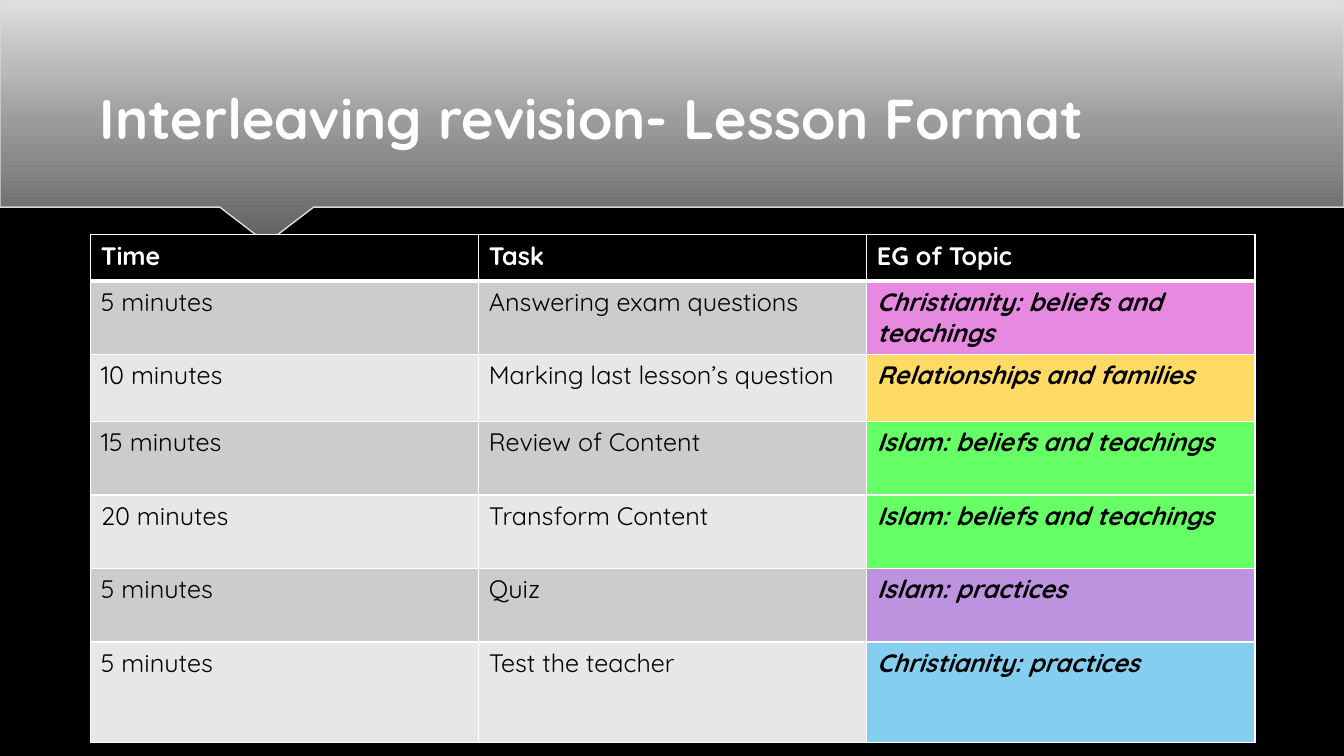
import pptx
import pptx.util
import pptx.dml.color
import pptx.enum.text
import pptx.oxml
import pptx.oxml.ns

Pt = pptx.util.Pt
RGB = pptx.dml.color.RGBColor.from_string

# Content
TITLE = "Interleaving revision- Lesson Format"
HEADS = ("Time", "Task", "EG of Topic")
TASKS = [  # time, task, topic, topic colour, row height
    ("5 minutes", "Answering exam questions", "Christianity: beliefs and teachings", "E789E0", 52),
    ("10 minutes", "Marking last lesson’s question", "Relationships and families", "FFDA65", 48),
    ("15 minutes", "Review of Content", "Islam: beliefs and teachings", "66FF66", 52.5),
    ("20 minutes", "Transform Content", "Islam: beliefs and teachings", "66FF66", 52.5),
    ("5 minutes", "Quiz", "Islam: practices", "BD92DE", 52.5),
    ("5 minutes", "Test the teacher", "Christianity: practices", "84CFF0", 72),
]
THEME = {
    "font": "Quicksand", "title": 40, "body": 18,
    "back": "000000", "light": "FFFFFF", "head": "FEFEFE", "edge": "DADADA",
    "bands": ("CCCCCC", "E7E7E7"),
    "fade": ((0, "616161"), (50, "9C9C9C"), (70, "B8B8B8"), (100, "DFDFDF")),
}
WIDE, HIGH = 960, 540
BASE = 148.3  # lower edge of the banner
BANNER = [(WIDE, 0), (0, 0), (0, BASE), (157, BASE), (187.2, 171.4),
          (191, 172), (194.4, 171.4), (224, BASE), (WIDE, BASE)]
LEFT, TOP, COL, HEAD = 64.8, 167.7, 277.2, 33


def xml(tag, inner, attrs=""):
    space = pptx.oxml.ns.nsdecls("a")
    return pptx.oxml.parse_xml(f"<a:{tag} {space} {attrs}>{inner}</a:{tag}>")


def style(frame, size, color, bold=False, slant=False):
    for run in frame.paragraphs[0].runs:
        font = run.font
        font.name, font.size = THEME["font"], Pt(size)
        font.bold, font.italic = bold, slant
        font.color.rgb = RGB(color)


def border(cell, base):
    props = cell._tc.get_or_add_tcPr()
    line = f'<a:solidFill><a:srgbClr val="{THEME["light"]}"/></a:solidFill>'
    for spot, side in enumerate("LRTB"):
        width = Pt(base if side == "B" else 1)
        props.insert(spot, xml("ln" + side, line, f'w="{width}"'))


def put(cell, text, fill, color, bold=False, slant=False, base=1):
    cell.text_frame.text = text
    style(cell.text_frame, THEME["body"], color, bold, slant)
    cell.fill.solid()
    cell.fill.fore_color.rgb = RGB(fill)
    border(cell, base)


def add_banner(slide):
    pen = slide.shapes.build_freeform(*BANNER[0], scale=Pt(1))
    pen.add_line_segments(BANNER[1:], close=True)
    shape = pen.convert_to_shape()
    shape.shadow.inherit = False
    shape.line.color.rgb = RGB(THEME["edge"])
    shape.line.width = Pt(1)
    shape.fill.gradient()
    grad = shape._element.spPr.find(pptx.oxml.ns.qn("a:gradFill"))
    stops = "".join(f'<a:gs pos="{at * 1000}"><a:srgbClr val="{color}"/></a:gs>'
                    for at, color in THEME["fade"])
    fade = xml("gradFill", f'<a:gsLst>{stops}</a:gsLst><a:lin ang="16200000" scaled="0"/>')
    grad.getparent().replace(grad, fade)
    # Place the banner behind the title
    slide.shapes._spTree.insert(2, shape._element)


def add_title(slide):
    title = slide.shapes.title
    title.left, title.top, title.width, title.height = Pt(64), Pt(35.3), Pt(832.3), Pt(76.3)
    frame = title.text_frame
    frame.text = TITLE
    frame.word_wrap = True
    frame.vertical_anchor = pptx.enum.text.MSO_ANCHOR.BOTTOM
    frame.paragraphs[0].alignment = pptx.enum.text.PP_ALIGN.LEFT
    style(frame, THEME["title"], THEME["head"], True)
    # Soft shadow under the letters
    glow = xml("effectLst", '<a:outerShdw blurRad="50800" dist="38100" dir="5400000">'
               '<a:srgbClr val="000000"><a:alpha val="50000"/></a:srgbClr></a:outerShdw>')
    frame.paragraphs[0].runs[0].font._element.insert(1, glow)


def add_tasks(slide):
    highs = [HEAD] + [task[4] for task in TASKS]
    table = slide.shapes.add_table(len(highs), len(HEADS), Pt(LEFT), Pt(TOP),
                                   Pt(COL * len(HEADS)), Pt(sum(highs))).table
    for col in table.columns:
        col.width = Pt(COL)
    for row, high in zip(table.rows, highs):
        row.height = Pt(high)
    for col, text in enumerate(HEADS):
        put(table.cell(0, col), text, THEME["back"], THEME["light"], bold=True, base=3)
    for row, (time, task, topic, color, _) in enumerate(TASKS, 1):
        band = THEME["bands"][(row - 1) % 2]
        put(table.cell(row, 0), time, band, THEME["back"])
        put(table.cell(row, 1), task, band, THEME["back"])
        put(table.cell(row, 2), topic, color, THEME["back"], bold=True, slant=True)


def main():
    deck = pptx.Presentation()
    deck.slide_width, deck.slide_height = Pt(WIDE), Pt(HIGH)
    slide = deck.slides.add_slide(deck.slide_layouts[5])
    slide.background.fill.solid()
    slide.background.fill.fore_color.rgb = RGB(THEME["back"])
    add_banner(slide)
    add_title(slide)
    add_tasks(slide)
    deck.save("out.pptx")


if __name__ == "__main__":
    main()
